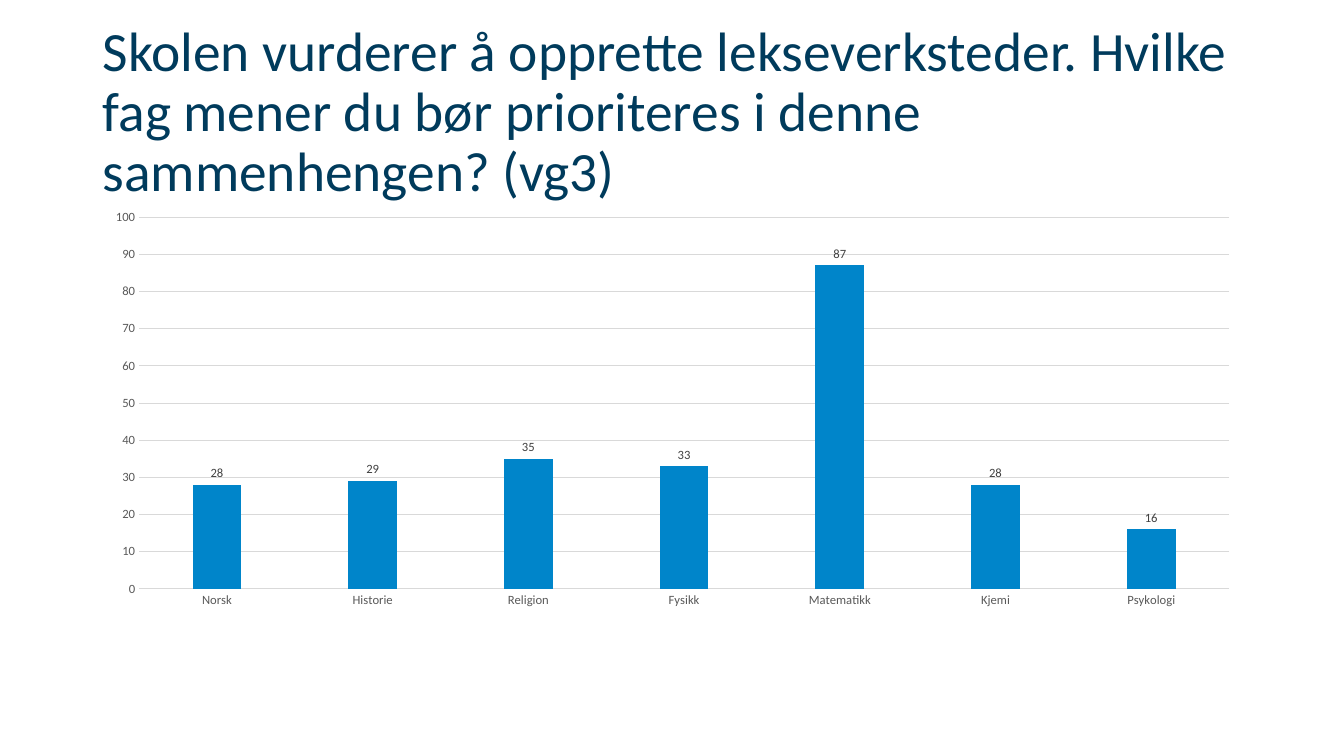
from pptx import Presentation, util as u
from pptx.chart.data import CategoryChartData
from pptx.dml.color import RGBColor
from pptx.enum import chart as ch, text

WIDE, HIGH = 13.33, 7.5
LEFT, SPAN = 0.92, 11.5
FACE = "Calibri"
HUES = {"title": "003B5C", "bar": "0085CA", "axis": "595959",
        "grid": "D9D9D9", "label": "404040"}
TITLE = ("Skolen vurderer å opprette lekseverksteder. Hvilke fag mener du "
         "bør prioriteres i denne sammenhengen? (vg3)")
VOTES = {"Norsk": 28, "Historie": 29, "Religion": 35, "Fysikk": 33,
         "Matematikk": 87, "Kjemi": 28, "Psykologi": 16}


def hue(name):
    return RGBColor.from_string(HUES[name])


def style(font, size, name):
    font.name, font.size = FACE, u.Pt(size)
    font.color.rgb = hue(name)


def rule(line):
    line.color.rgb = hue("grid")
    line.width = u.Pt(0.75)


def add_title(slide, box):
    frame = slide.shapes.add_textbox(*map(u.Inches, box)).text_frame
    frame.word_wrap = True
    frame.vertical_anchor = text.MSO_ANCHOR.MIDDLE
    para = frame.paragraphs[0]
    para.text = TITLE
    para.line_spacing = 0.9
    style(para.font, 39.6, "title")


def add_bars(slide, box):
    data = CategoryChartData(number_format="General")
    data.categories = list(VOTES)
    data.add_series("Series 1", list(VOTES.values()))
    chart = slide.shapes.add_chart(
        ch.XL_CHART_TYPE.COLUMN_CLUSTERED, *map(u.Inches, box), data).chart
    chart.has_title = chart.has_legend = False
    chart.font.name, chart.font.size = FACE, u.Pt(10)

    for axis in (chart.category_axis, chart.value_axis):
        axis.major_tick_mark = axis.minor_tick_mark = ch.XL_TICK_MARK.NONE
        style(axis.tick_labels.font, 9, "axis")
    rule(chart.category_axis.format.line)
    scale = chart.value_axis
    scale.minimum_scale, scale.maximum_scale, scale.major_unit = 0, 100, 10
    scale.format.line.fill.background()
    rule(scale.major_gridlines.format.line)

    plot = chart.plots[0]
    plot.vary_by_categories = False
    plot.gap_width, plot.overlap = 219, -27
    bars = plot.series[0]
    bars.format.fill.solid()
    bars.format.fill.fore_color.rgb = hue("bar")
    labels = bars.data_labels
    labels.show_value = True
    labels.position = ch.XL_LABEL_POSITION.OUTSIDE_END
    style(labels.font, 9, "label")


def main():
    deck = Presentation()
    deck.slide_width, deck.slide_height = u.Inches(WIDE), u.Inches(HIGH)
    slide = deck.slides.add_slide(deck.slide_layouts[6])
    add_title(slide, (LEFT, 0.4, SPAN, 1.45))
    add_bars(slide, (LEFT, 2, SPAN, 4.11))
    deck.save("out.pptx")


if __name__ == "__main__":
    main()
